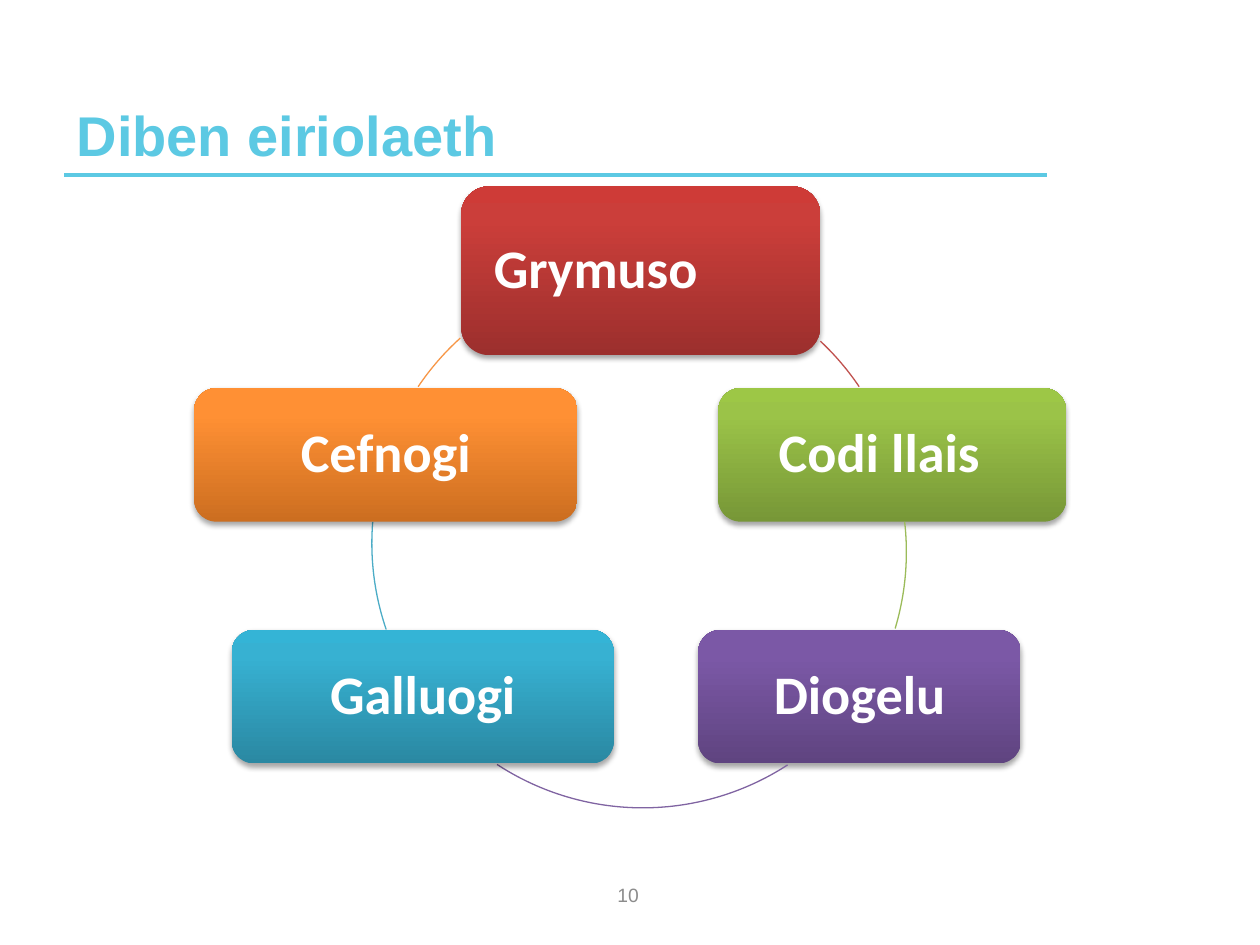
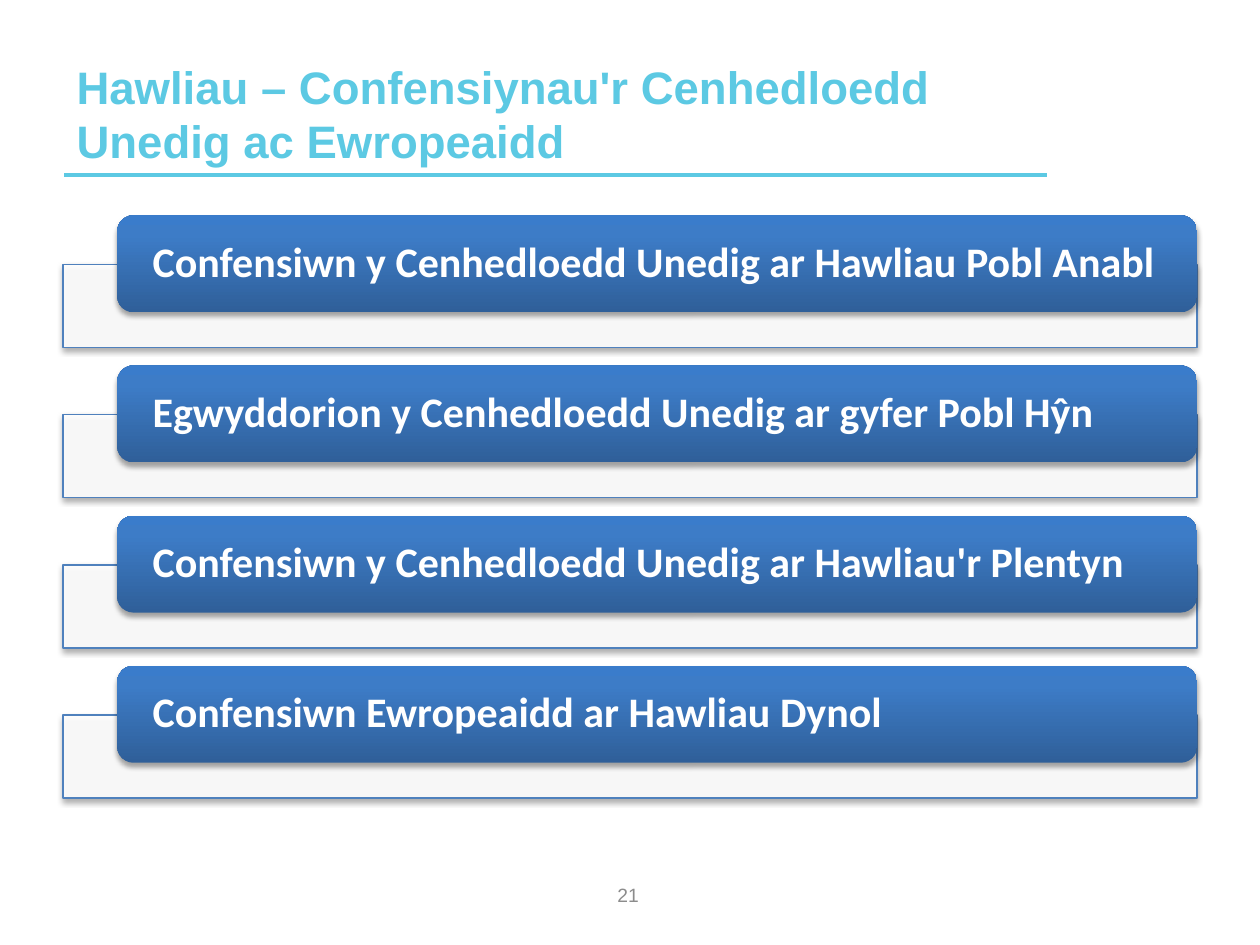
from dataclasses import dataclass

from lxml import etree
from pptx import Presentation
from pptx.dml.color import RGBColor
from pptx.enum import shapes, text
from pptx.oxml.ns import qn
from pptx.util import Pt


@dataclass(frozen=True)
class Theme:
    heading: str = "5CC9E3"
    footer: str = "8C8C8C"
    light: str = "FFFFFF"
    shadow: str = "000000"
    band_line: str = "4F81BD"
    # Gradient stops run from the bottom edge (0 %) through 80 % to the top
    blue: tuple = ("2F5F99", "3D7CC7", "3A7CCB")
    red: tuple = ("9C2F2D", "CB3E3A", "CE3B37")
    green: tuple = ("779737", "9BC348", "9DC746")
    purple: tuple = ("5F4480", "7B58A6", "7C57A8")
    teal: tuple = ("2A88A2", "37B1D2", "34B4D6")
    orange: tuple = ("CC6E20", "FF9034", "FF9136")
    heading_font: str = "Arial"
    body_font: str = "Calibri"
    title_size: int = 32
    long_title_size: int = 26
    node_size: int = 31
    row_size: int = 24
    footer_size: int = 11
    thin: float = 0.75


THEME = Theme()
PP = text.PP_ALIGN
ANCHOR = text.MSO_ANCHOR
SHAPE = shapes.MSO_SHAPE

TITLE_BOX = (36.7, 20.9, 561.6, 78.5)
FOOTER_BOX = (275, 496.8, 167.8, 28.8)
CYCLE_BOX = (111, 106.5, 498, 360)
ROWS_BOX = (36, 123.1, 648, 333)

CIRCLE_DIAMETER = 304
# label, gradient, box, alignment, left and right insets
PURPOSES = [
    ("Grymuso", THEME.red, (152.5, 0, 205.2, 96.5), PP.LEFT, (14, 14)),
    ("Codi llais", THEME.green, (299.5, 115.3, 198.7, 76.3), PP.CENTER, (13, 28)),
    ("Diogelu", THEME.purple, (288, 253.5, 184.3, 76.3), PP.CENTER, (13, 13)),
    ("Galluogi", THEME.teal, (21.5, 253.5, 218.2, 76.3), PP.CENTER, (13, 13)),
    ("Cefnogi", THEME.orange, (0, 115.3, 218.9, 76.3), PP.CENTER, (13, 13)),
]
# colour, circle corner, start and end angle in degrees clockwise from the right
LINKS = [
    ("C0504D", (102, 47.5), 313.1, 326),
    ("9BBB59", (103, 57), 353.5, 16.7),
    ("8064A2", (104.3, 51.2), 57, 123.2),
    ("4BACC6", (101.5, 52), 161.1, 184.6),
    ("F79646", (102, 47.5), 214, 227.9),
]
CONVENTIONS = [
    "Confensiwn y Cenhedloedd Unedig ar Hawliau Pobl Anabl",
    "Egwyddorion y Cenhedloedd Unedig ar gyfer Pobl Hŷn",
    "Confensiwn y Cenhedloedd Unedig ar Hawliau'r Plentyn",
    "Confensiwn Ewropeaidd ar Hawliau Dynol",
]


def points(*values):
    return [Pt(value) for value in values]


def rgb(colour):
    return RGBColor.from_string(colour)


def sub(parent, tag, **attributes):
    return etree.SubElement(parent, qn(tag), **attributes)


def write(holder, content, *, size, colour, font=THEME.body_font, bold=True,
          align=PP.LEFT, anchor=ANCHOR.MIDDLE, insets=(7.2, 3.6, 7.2, 3.6),
          spacing=None):
    """Fill the holder with one paragraph; insets run left, top, right, bottom."""
    frame = holder.text_frame
    frame.word_wrap = True
    frame.vertical_anchor = anchor
    (frame.margin_left, frame.margin_top,
     frame.margin_right, frame.margin_bottom) = points(*insets)
    paragraph = frame.paragraphs[0]
    paragraph.alignment = align
    if spacing:
        paragraph.line_spacing = spacing
    run = paragraph.add_run()
    run.text = content
    run.font.name = font
    run.font.size = Pt(size)
    run.font.bold = bold
    run.font.color.rgb = rgb(colour)


def add_plain(slide, kind, box, line=None):
    """Add a preset shape with no fill and no shadow."""
    shape = slide.shapes.add_shape(kind, *points(*box))
    shape.shadow.inherit = False
    shape.fill.background()
    if line:
        shape.line.color.rgb = rgb(line)
        shape.line.width = Pt(THEME.thin)
    else:
        shape.line.fill.background()
    return shape


def drop_shadow(shape):
    effects = shape._element.spPr.find(qn("a:effectLst"))
    shadow = sub(effects, "a:outerShdw", blurRad=str(Pt(3.1)), dist=str(Pt(1.8)),
                 dir="5400000", rotWithShape="0")
    colour = sub(shadow, "a:srgbClr", val=THEME.shadow)
    sub(colour, "a:alpha", val="35000")


def add_glossy(slide, box, gradient):
    shape = add_plain(slide, SHAPE.ROUNDED_RECTANGLE, box)
    shape.fill.gradient()
    shape.fill.gradient_angle = 90
    stops = shape._element.spPr.find(qn("a:gradFill")).find(qn("a:gsLst"))
    for stop in list(stops):
        stops.remove(stop)
    for position, colour in zip((0, 80, 100), gradient):
        stop = sub(stops, "a:gs", pos=str(position * 1000))
        sub(stop, "a:srgbClr", val=colour)
    drop_shadow(shape)
    return shape


def add_frame(slide, title, title_size, number):
    """Add the title, its rule and the page number."""
    left, top, width, height = TITLE_BOX
    rule_top = top + height + 0.7
    rule = slide.shapes.add_connector(
        shapes.MSO_CONNECTOR.STRAIGHT,
        *points(left, rule_top, left + width, rule_top))
    rule.line.color.rgb = rgb(THEME.heading)
    rule.line.width = Pt(2)
    sub(rule._element.spPr, "a:effectLst")
    write(slide.shapes.add_textbox(*points(*TITLE_BOX)), title, size=title_size,
          colour=THEME.heading, font=THEME.heading_font, anchor=ANCHOR.BOTTOM)
    write(slide.shapes.add_textbox(*points(*FOOTER_BOX)), str(number),
          size=THEME.footer_size, colour=THEME.footer, font=THEME.heading_font,
          bold=False, align=PP.CENTER)


def add_cycle(slide, box):
    left, top = box[:2]
    for purpose, link in zip(PURPOSES, LINKS):
        label, gradient, (x, y, width, height), align, (inset_l, inset_r) = purpose
        node = add_glossy(slide, (left + x, top + y, width, height), gradient)
        write(node, label, size=THEME.node_size, colour=THEME.light, align=align,
              insets=(inset_l, 13, inset_r, 13), spacing=0.9)
        colour, (x, y), start, end = link
        arc = add_plain(slide, SHAPE.ARC, (left + x, top + y, CIRCLE_DIAMETER,
                                           CIRCLE_DIAMETER), colour)
        # An angle adjustment counts 60000ths of a degree, scaled by 100000
        arc.adjustments[0] = start * 0.6
        arc.adjustments[1] = end * 0.6


def add_convention_rows(slide, box):
    left, top, width, height = box
    pill_height, band_offset, band_height, indent = 55.4, 28.1, 47.5, 31
    pitch = (height - band_offset - band_height) / (len(CONVENTIONS) - 1)
    for index, convention in enumerate(CONVENTIONS):
        row_top = top + index * pitch
        band = add_plain(slide, SHAPE.RECTANGLE,
                         (left, row_top + band_offset, width, band_height),
                         THEME.band_line)
        band.fill.solid()
        band.fill.fore_color.rgb = rgb(THEME.light)
        fill = band._element.spPr.find(qn("a:solidFill"))
        sub(fill[0], "a:alpha", val="90000")
        drop_shadow(band)
        pill = add_glossy(slide, (left + indent, row_top, width - indent,
                                  pill_height), THEME.blue)
        write(pill, convention, size=THEME.row_size, colour=THEME.light,
              insets=(17.5, 0, 17.5, 0), spacing=0.9)


def main():
    deck = Presentation()
    deck.slide_width, deck.slide_height = points(720, 540)
    blank = deck.slide_layouts[6]

    purpose = deck.slides.add_slide(blank)
    add_frame(purpose, "Diben eiriolaeth", THEME.title_size, 10)
    add_cycle(purpose, CYCLE_BOX)

    rights = deck.slides.add_slide(blank)
    add_frame(rights, "Hawliau – Confensiynau'r Cenhedloedd Unedig ac Ewropeaidd",
              THEME.long_title_size, 21)
    add_convention_rows(rights, ROWS_BOX)

    deck.save("out.pptx")


if __name__ == "__main__":
    main()
